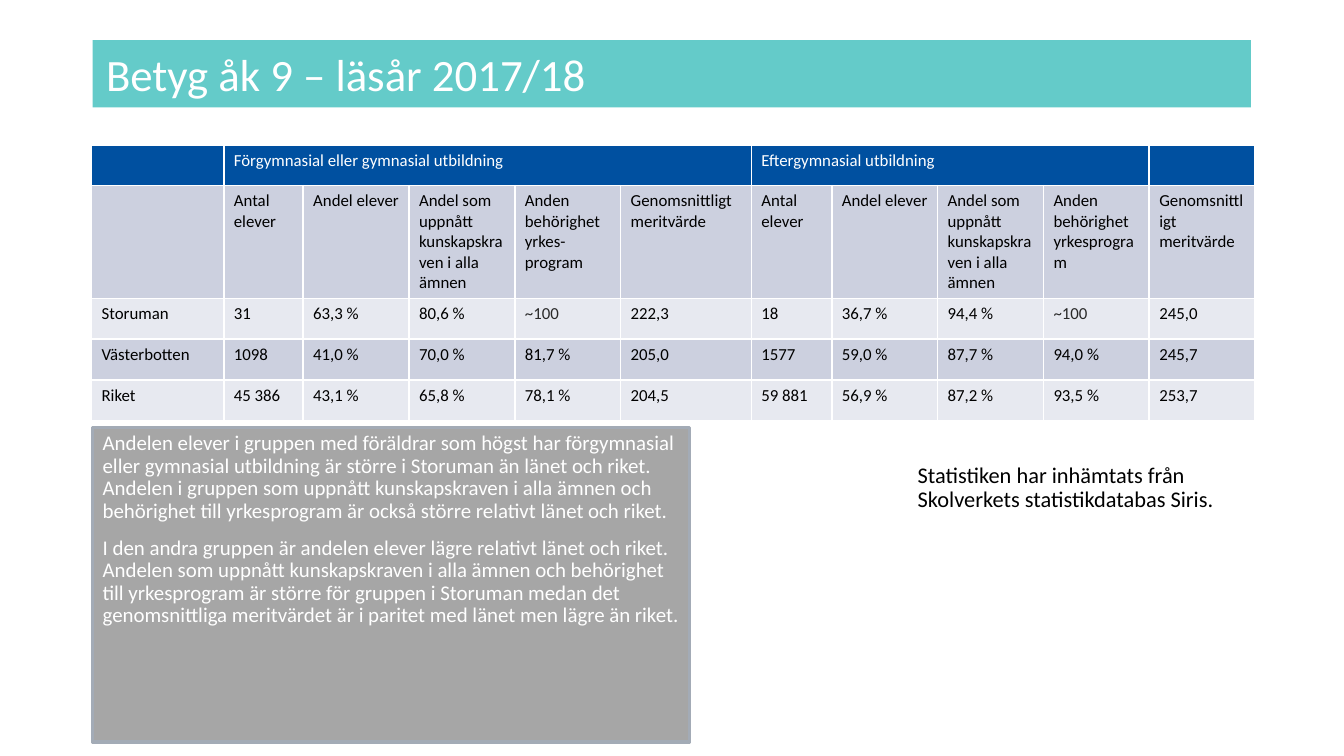
import pptx
import pptx.dml.color
import pptx.enum.text
import pptx.oxml.ns
import pptx.util
from lxml import etree

Cm = pptx.util.Cm
Pt = pptx.util.Pt
Anchor = pptx.enum.text.MSO_ANCHOR

# Content
TITLE = "Betyg åk 9 – läsår 2017/18"
GROUPS = [  # label, first column, last column
    ("", 0, 0),
    ("Förgymnasial eller gymnasial utbildning", 1, 5),
    ("Eftergymnasial utbildning", 6, 9),
    ("", 10, 10),
]
SHARED_HEADS = ["Antal elever", "Andel elever", "Andel som uppnått kunskapskraven i alla ämnen"]
MERIT_HEAD = "Genomsnittligt meritvärde"
ROWS = [
    ["", *SHARED_HEADS, "Anden behörighet yrkes-program", MERIT_HEAD,
     *SHARED_HEADS, "Anden behörighet yrkesprogram", MERIT_HEAD],
    ["Storuman", "31", "63,3 %", "80,6 %", "~100", "222,3",
     "18", "36,7 %", "94,4 %", "~100", "245,0"],
    ["Västerbotten", "1098", "41,0 %", "70,0 %", "81,7 %", "205,0",
     "1577", "59,0 %", "87,7 %", "94,0 %", "245,7"],
    ["Riket", "45 386", "43,1 %", "65,8 %", "78,1 %", "204,5",
     "59 881", "56,9 %", "87,2 %", "93,5 %", "253,7"],
]
ANALYSIS = [
    "Andelen elever i gruppen med föräldrar som högst har förgymnasial eller gymnasial "
    "utbildning är större i Storuman än länet och riket. Andelen i gruppen som uppnått "
    "kunskapskraven i alla ämnen och behörighet till yrkesprogram är också större relativt "
    "länet och riket.",
    "I den andra gruppen är andelen elever lägre relativt länet och riket. Andelen som uppnått "
    "kunskapskraven i alla ämnen och behörighet till yrkesprogram är större för gruppen i "
    "Storuman medan det genomsnittliga meritvärdet är i paritet med länet men lägre än riket.",
]
SOURCE_NOTE = ["Statistiken har inhämtats från Skolverkets statistikdatabas Siris."]

# Theme and layout (lengths in cm, type in points)
THEME = {
    "font": "Calibri",
    "white": "FFFFFF", "black": "000000", "soft_black": "292929",
    "banner": "64CBC9", "header": "0050A0", "bands": ["CCD0DF", "E7E9F0"],
    "panel": "A6A6A6", "panel_line": "A3ABB6",
    "title_size": 24, "note_size": 12, "panel_size": 11.2, "table_size": 9,
}
PAGE_SIZE = (25.4, 14.29)
TITLE_AT = (1.75, 0.76, 21.89, 1.27)
TABLE_AT = (1.73, 2.74)
NOTE_AT = (17.09, 8.64, 6.58, 2.77)
PANEL_AT = (1.75, 8.08, 11.28, 5.94)
COLUMNS = [2.5, 1.5, 2, 2, 2, 2.47, 1.52, 2, 2, 2, 2]
ROW_HEIGHTS = [0.77, 2.12, 0.77, 0.77, 0.77]
INSETS = (0.19, 0.1)


def rgb(name):
    return pptx.dml.color.RGBColor.from_string(name)


def write(frame, texts, size, color, spacing=None, gap=0):
    """Fill a text frame with unbulleted, left-aligned paragraphs."""
    for number, text in enumerate(texts):
        para = frame.paragraphs[0] if number == 0 else frame.add_paragraph()
        properties = para._p.get_or_add_pPr()
        properties.set("marL", "0")
        properties.set("indent", "0")
        etree.SubElement(properties, pptx.oxml.ns.qn("a:buNone"))
        para.alignment = pptx.enum.text.PP_ALIGN.LEFT
        para.space_before = Pt(gap if number else 0)
        if spacing:
            para.line_spacing = spacing
        if text:
            span = para.add_run()
            span.text = text
            span.font.name = THEME["font"]
            span.font.size = Pt(size)
            span.font.color.rgb = rgb(color)
        else:
            end = etree.SubElement(para._p, pptx.oxml.ns.qn("a:endParaRPr"))
            end.set("sz", str(size * 100))


def place(box, at, anchor, fill=None):
    box.left, box.top, box.width, box.height = map(Cm, at)
    frame = box.text_frame
    frame.word_wrap = True
    frame.auto_size = pptx.enum.text.MSO_AUTO_SIZE.NONE
    frame.vertical_anchor = anchor
    if fill:
        box.fill.solid()
        box.fill.fore_color.rgb = rgb(fill)
    return frame


def format_cell(cell, text, fill, color):
    cell.margin_left = cell.margin_right = Cm(INSETS[0])
    cell.margin_top = cell.margin_bottom = Cm(INSETS[1])
    properties = cell._tc.get_or_add_tcPr()
    for side in ("lnL", "lnR", "lnT", "lnB"):
        line = etree.SubElement(properties, pptx.oxml.ns.qn(f"a:{side}"), w=str(Pt(1)))
        solid = etree.SubElement(line, pptx.oxml.ns.qn("a:solidFill"))
        etree.SubElement(solid, pptx.oxml.ns.qn("a:srgbClr"), val=THEME["white"])
    cell.fill.solid()
    cell.fill.fore_color.rgb = rgb(fill)
    write(cell.text_frame, [text], THEME["table_size"], color)


def add_grades_table(page):
    left, top = map(Cm, TABLE_AT)
    table = page.shapes.add_table(
        len(ROW_HEIGHTS), len(COLUMNS), left, top,
        Cm(sum(COLUMNS)), Cm(sum(ROW_HEIGHTS))).table
    for column, width in zip(table.columns, COLUMNS):
        column.width = Cm(width)
    for row, height in zip(table.rows, ROW_HEIGHTS):
        row.height = Cm(height)

    # Group header, merged over the columns of each group
    for label, first, last in GROUPS:
        for column in range(first, last + 1):
            format_cell(table.cell(0, column), label if column == first else "",
                        THEME["header"], THEME["white"])
        if last > first:
            table.cell(0, first).merge(table.cell(0, last))

    # Column heads and values in alternating bands
    for number, values in enumerate(ROWS):
        for column, text in enumerate(values):
            color = THEME["soft_black" if text.startswith("~") else "black"]
            format_cell(table.cell(number + 1, column), text,
                        THEME["bands"][number % 2], color)


def main():
    deck = pptx.Presentation()
    deck.slide_width, deck.slide_height = map(Cm, PAGE_SIZE)
    page = deck.slides.add_slide(deck.slide_layouts.get_by_name("Two Content"))
    title, note, panel = page.placeholders

    # Title banner
    frame = place(title, TITLE_AT, Anchor.MIDDLE, THEME["banner"])
    write(frame, [TITLE], THEME["title_size"], THEME["white"])

    add_grades_table(page)

    # Source note
    frame = place(note, NOTE_AT, Anchor.TOP)
    write(frame, SOURCE_NOTE, THEME["note_size"], THEME["black"], spacing=0.9)

    # Analysis panel
    frame = place(panel, PANEL_AT, Anchor.TOP, THEME["panel"])
    frame.margin_left = frame.margin_right = Cm(INSETS[0])
    frame.margin_top = frame.margin_bottom = Cm(INSETS[1])
    panel.line.color.rgb = rgb(THEME["panel_line"])
    panel.line.width = Pt(2)
    write(frame, ANALYSIS, THEME["panel_size"], THEME["white"], spacing=0.9, gap=7.5)

    deck.save("out.pptx")


if __name__ == "__main__":
    main()
